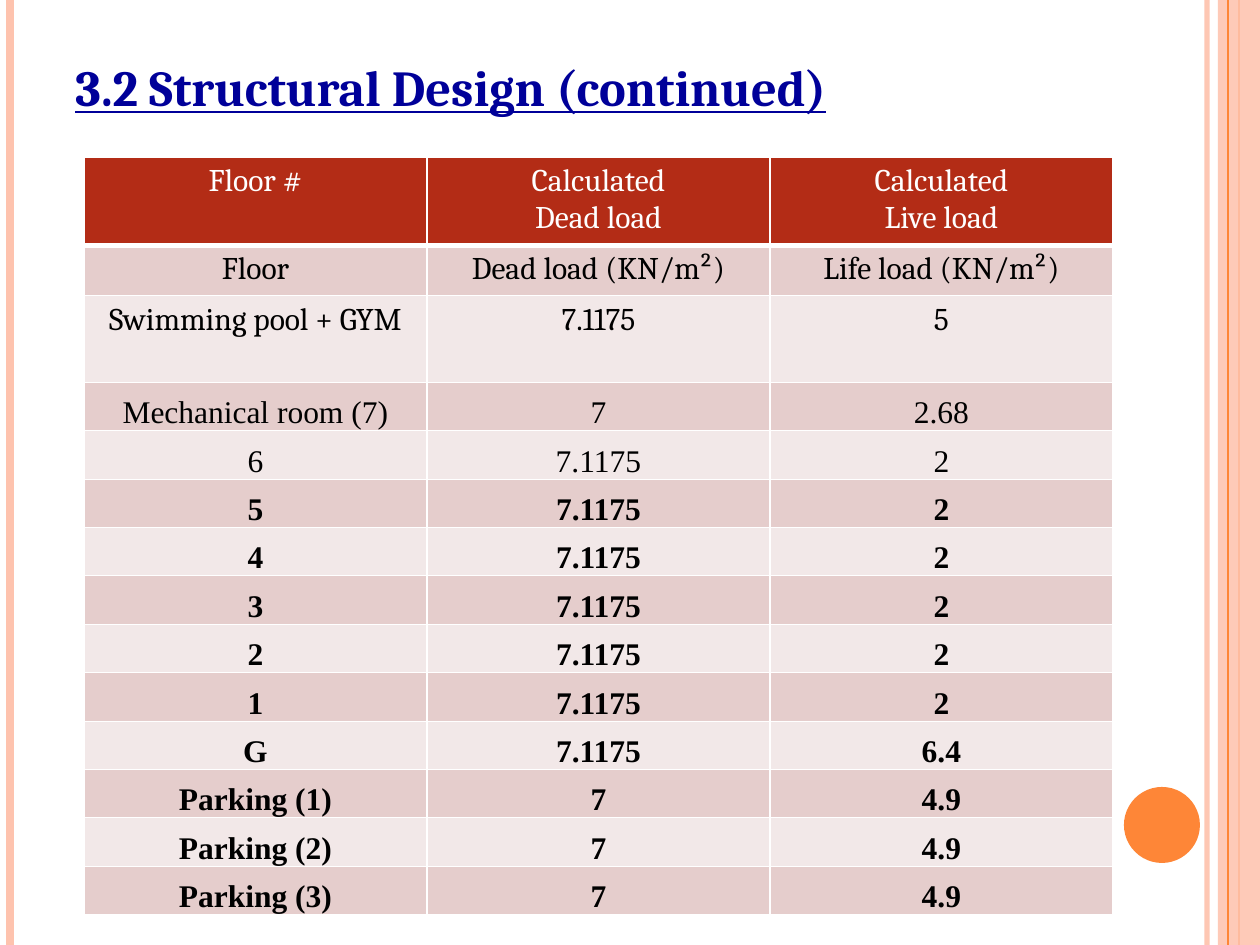
from lxml import etree
from pptx import Presentation
from pptx.dml.color import RGBColor
from pptx.enum.shapes import MSO_CONNECTOR, MSO_SHAPE
from pptx.enum.text import MSO_ANCHOR, PP_ALIGN
from pptx.oxml.ns import qn
from pptx.util import Emu, Pt

EMU_PER_PX = 914400 / 126
SLIDE_WIDTH, SLIDE_HEIGHT = 1260, 945

STRAIGHT = MSO_CONNECTOR.STRAIGHT
RECTANGLE, OVAL = MSO_SHAPE.RECTANGLE, MSO_SHAPE.OVAL
BOTTOM, TOP = MSO_ANCHOR.BOTTOM, MSO_ANCHOR.TOP
CENTER = PP_ALIGN.CENTER

WHITE = RGBColor(0xFF, 0xFF, 0xFF)
BLACK = RGBColor(0x00, 0x00, 0x00)
NAVY = RGBColor(0x00, 0x00, 0x99)
PEACH = RGBColor(0xFE, 0xC3, 0xAE)
ORANGE = RGBColor(0xFE, 0x86, 0x37)
BRICK = RGBColor(0xB3, 0x2C, 0x16)
DARK_BAND = RGBColor(0xE5, 0xCD, 0xCC)
LIGHT_BAND = RGBColor(0xF2, 0xE8, 0xE8)

HEADING_FONT, FIGURE_FONT = "Cambria", "Times New Roman"
FIRST_FIGURE_ROW, FIRST_BOLD_ROW = 3, 5
COLUMN_WIDTH = 343
TOP_ROW_HEIGHTS = [87, 49, 87]
FIGURE_ROWS_HEIGHT = 532

LOADS = [
    ("Floor #", "Calculated\nDead load", "Calculated\nLive load"),
    ("Floor", "Dead load (KN/m²)", "Life load (KN/m²)"),
    ("Swimming pool + GYM", "7.1175", "5"),
    ("Mechanical room (7)", "7", "2.68"),
    *((floor, "7.1175", "2") for floor in "654321"),
    ("G", "7.1175", "6.4"),
    *((f"Parking ({level})", "7", "4.9") for level in (1, 2, 3)),
]


def px(length):
    return Emu(round(length * EMU_PER_PX))


def set_opacity(fill_parent, percent):
    color = fill_parent.find(".//" + qn("a:srgbClr"))
    etree.SubElement(color, qn("a:alpha"), val=str(percent * 1000))


def add_vertical_line(slide, x, color, width, opacity=100):
    line = slide.shapes.add_connector(STRAIGHT, px(x), 0, px(x), px(SLIDE_HEIGHT))
    line.line.color.rgb = color
    line.line.width = Pt(width)
    properties = line._element.spPr
    if opacity < 100:
        set_opacity(properties, opacity)
    etree.SubElement(properties, qn("a:effectLst"))


def add_filled_shape(slide, kind, left, top, width, height, color, opacity=100):
    shape = slide.shapes.add_shape(kind, px(left), px(top), px(width), px(height))
    shape.shadow.inherit = False
    shape.fill.solid()
    shape.fill.fore_color.rgb = color
    shape.line.fill.background()
    if opacity < 100:
        set_opacity(shape._element.spPr, opacity)


def add_title(slide, text):
    box = slide.shapes.add_textbox(px(63), px(38), px(1029), px(141))
    frame = box.text_frame
    frame.word_wrap = True
    frame.vertical_anchor = BOTTOM
    frame.margin_bottom = px(62)
    frame.text = text
    font = frame.paragraphs[0].font
    font.name, font.size = HEADING_FONT, Pt(28.8)
    font.bold = font.underline = True
    font.color.rgb = NAVY


def set_borders(cell, top, bottom):
    """Draw white borders, with the top and bottom widths in points."""
    properties = cell._tc.get_or_add_tcPr()
    for side, width in (("L", 1), ("R", 1), ("T", top), ("B", bottom)):
        border = etree.SubElement(properties, qn(f"a:ln{side}"), w=str(Pt(width)))
        fill = etree.SubElement(border, qn("a:solidFill"))
        etree.SubElement(fill, qn("a:srgbClr"), val=str(WHITE))


def fill_cell(cell, text, row):
    is_header = row == 0
    is_figure = row >= FIRST_FIGURE_ROW
    set_borders(cell, 3 if row == 1 else 1, 3 if is_header else 1)
    cell.fill.solid()
    band = DARK_BAND if row % 2 else LIGHT_BAND
    cell.fill.fore_color.rgb = BRICK if is_header else band
    cell.vertical_anchor = BOTTOM if is_figure else TOP
    if is_figure:
        cell.margin_left = cell.margin_right = px(9)
        cell.margin_top = cell.margin_bottom = 0
    cell.text = text
    for paragraph in cell.text_frame.paragraphs:
        paragraph.alignment = CENTER
        if is_figure:
            paragraph.line_spacing = 1.15
            paragraph.space_after = Pt(10)
        font = paragraph.font
        font.name = FIGURE_FONT if is_figure else HEADING_FONT
        font.size = Pt(18)
        font.bold = row >= FIRST_BOLD_ROW
        font.color.rgb = WHITE if is_header else BLACK


def add_load_table(slide):
    figure_rows = len(LOADS) - FIRST_FIGURE_ROW
    edges = [round(i * FIGURE_ROWS_HEIGHT / figure_rows) for i in range(figure_rows + 1)]
    heights = TOP_ROW_HEIGHTS + [b - a for a, b in zip(edges, edges[1:])]
    columns = len(LOADS[0])
    table = slide.shapes.add_table(
        len(LOADS), columns, px(84), px(157), px(columns * COLUMN_WIDTH), px(sum(heights))
    ).table
    table.horz_banding = False
    for column in table.columns:
        column.width = px(COLUMN_WIDTH)
    for row, (height, texts) in enumerate(zip(heights, LOADS)):
        table.rows[row].height = px(height)
        for column, text in enumerate(texts):
            fill_cell(table.cell(row, column), text, row)


def main():
    presentation = Presentation()
    presentation.slide_width = px(SLIDE_WIDTH)
    presentation.slide_height = px(SLIDE_HEIGHT)
    slide = presentation.slides.add_slide(presentation.slide_layouts[6])

    add_vertical_line(slide, 1207, PEACH, 3, opacity=93)
    add_vertical_line(slide, 10, PEACH, 4.5)
    add_vertical_line(slide, 1239, ORANGE, 1.5)
    add_filled_shape(slide, RECTANGLE, 1218, 0, 42, SLIDE_HEIGHT, PEACH, opacity=87)
    add_vertical_line(slide, 1228, ORANGE, 0.75)
    add_filled_shape(slide, OVAL, 1124, 787, 76, 76, ORANGE)
    add_title(slide, "3.2 Structural Design (continued)")
    add_load_table(slide)

    presentation.save("out.pptx")


if __name__ == "__main__":
    main()
